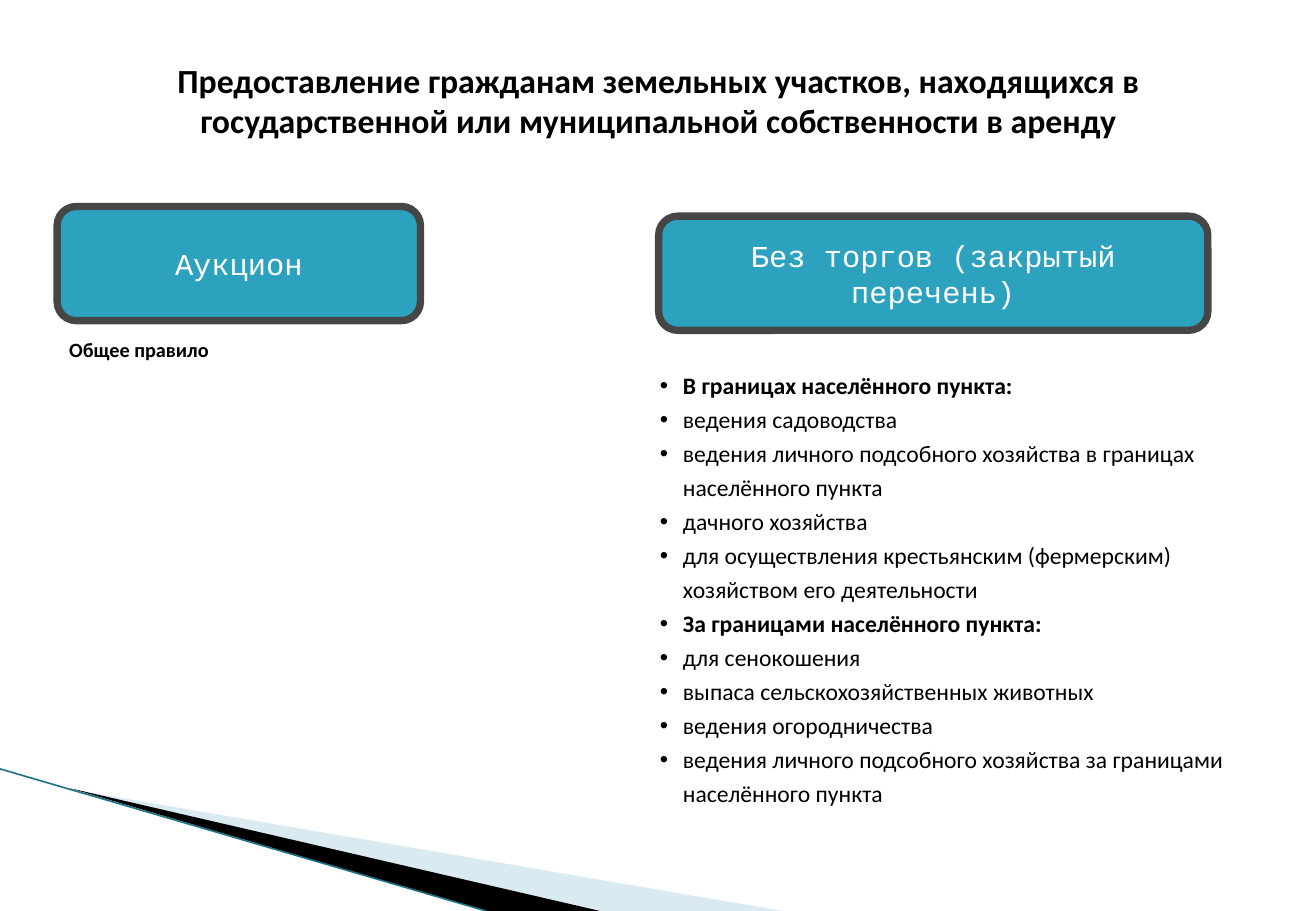
from lxml import etree
from pptx import Presentation
from pptx import util as u
from pptx.dml.color import RGBColor
from pptx.enum import shapes, text
from pptx.oxml import ns

PX = 9144  # 100 px to the inch
HUES = {"teal": "2DA2BF", "grey": "464646", "pale": "A0CBDC",
        "edge": "1F7389", "ink": "000000", "white": "FFFFFF"}
HEAD = ("Предоставление гражданам земельных участков, находящихся в "
        "государственной или муниципальной собственности в аренду")
# Each group: heading, then its purposes
GROUPS = {
    "В границах населённого пункта:": [
        "ведения садоводства",
        "ведения личного подсобного хозяйства в границах населённого пункта",
        "дачного хозяйства",
        "для осуществления крестьянским (фермерским) хозяйством его деятельности",
    ],
    "За границами населённого пункта:": [
        "для сенокошения",
        "выпаса сельскохозяйственных животных",
        "ведения огородничества",
        "ведения личного подсобного хозяйства за границами населённого пункта",
    ],
}


def px(*nums):
    return [u.Emu(n * PX) for n in nums]


def hue(name):
    return RGBColor.from_string(HUES[name])


def place(item, box):
    item.left, item.top, item.width, item.height = px(*box)


def style(para, size, face="Calibri", color="ink", bold=False):
    for run in para.runs:
        font = run.font
        font.size, font.name, font.bold = u.Pt(size), face, bold
        font.color.rgb = hue(color)


def frame(item, anchor):
    body = item.text_frame
    body.word_wrap = True
    body.auto_size = text.MSO_AUTO_SIZE.NONE
    body.vertical_anchor = anchor
    return body


def wedge(slide, points, color, alpha=None):
    path = slide.shapes.build_freeform(*points[0], scale=PX)
    path.add_line_segments(points[1:])
    form = path.convert_to_shape()
    form.shadow.inherit = False
    form.fill.solid()
    form.fill.fore_color.rgb = hue(color)
    form.line.fill.background()
    if alpha:
        tint = form.fill._xPr.find(".//" + ns.qn("a:srgbClr"))
        etree.SubElement(tint, ns.qn("a:alpha"), val=str(alpha * 1000))


def edge(slide, start, end):
    line = slide.shapes.add_connector(
        shapes.MSO_CONNECTOR.STRAIGHT, *px(*start), *px(*end))
    line.line.color.rgb = hue("edge")
    line.line.width = u.Pt(0.95)
    etree.SubElement(line._element.spPr, ns.qn("a:effectLst"))


def card(slide, box, words):
    item = slide.shapes.add_shape(
        shapes.MSO_SHAPE.ROUNDED_RECTANGLE, *px(*box))
    item.shadow.inherit = False
    item.fill.solid()
    item.fill.fore_color.rgb = hue("teal")
    item.line.color.rgb = hue("grey")
    item.line.width = u.Pt(4.33)
    body = frame(item, text.MSO_ANCHOR.MIDDLE)
    body.text = words
    para = body.paragraphs[0]
    para.alignment = text.PP_ALIGN.CENTER
    style(para, 18, "Courier New", "white")


def title(slide):
    item = slide.shapes.title
    place(item, (47, 44, 990, 77))
    body = frame(item, text.MSO_ANCHOR.TOP)
    body.text = HEAD
    para = body.paragraphs[0]
    para.alignment = text.PP_ALIGN.CENTER
    style(para, 20, bold=True)


def note(slide, box, words):
    body = frame(slide.shapes.add_textbox(*px(*box)), text.MSO_ANCHOR.TOP)
    body.text = words
    style(body.paragraphs[0], 12, bold=True)


def bullets(slide):
    item = slide.placeholders[1]
    place(item, (533, 296, 495, 378))
    body = frame(item, text.MSO_ANCHOR.TOP)
    rows = [row for head, items in GROUPS.items() for row in (head, *items)]
    body.text = "\n".join(rows)
    for para in body.paragraphs:
        para.line_spacing = 1.2
        para.space_before = u.Pt(0)
        props = para._p.get_or_add_pPr()
        props.set("marL", str(19 * PX))
        props.set("indent", str(-19 * PX))
        etree.SubElement(props, ns.qn("a:buFont"), typeface="Arial")
        etree.SubElement(props, ns.qn("a:buChar"), char="•")
        style(para, 14, bold=para.text in GROUPS)


def main():
    deck = Presentation()
    deck.slide_width, deck.slide_height = px(1083, 750)
    slide = deck.slides.add_slide(deck.slide_layouts[1])

    # Corner decoration
    wedge(slide, [(59, 650), (644, 750), (494, 750)], "pale", 40)
    wedge(slide, [(58, 649), (494, 750), (400, 750)], "ink")
    edge(slide, (0, 633), (400, 750))

    # Heading and the two ways of leasing
    title(slide)
    card(slide, (47, 170, 299, 94), "Аукцион")
    note(slide, (47, 273, 299, 74), "Общее правило")
    card(slide, (542, 178, 452, 94), "Без торгов (закрытый перечень)")
    bullets(slide)

    deck.save("out.pptx")


if __name__ == "__main__":
    main()
